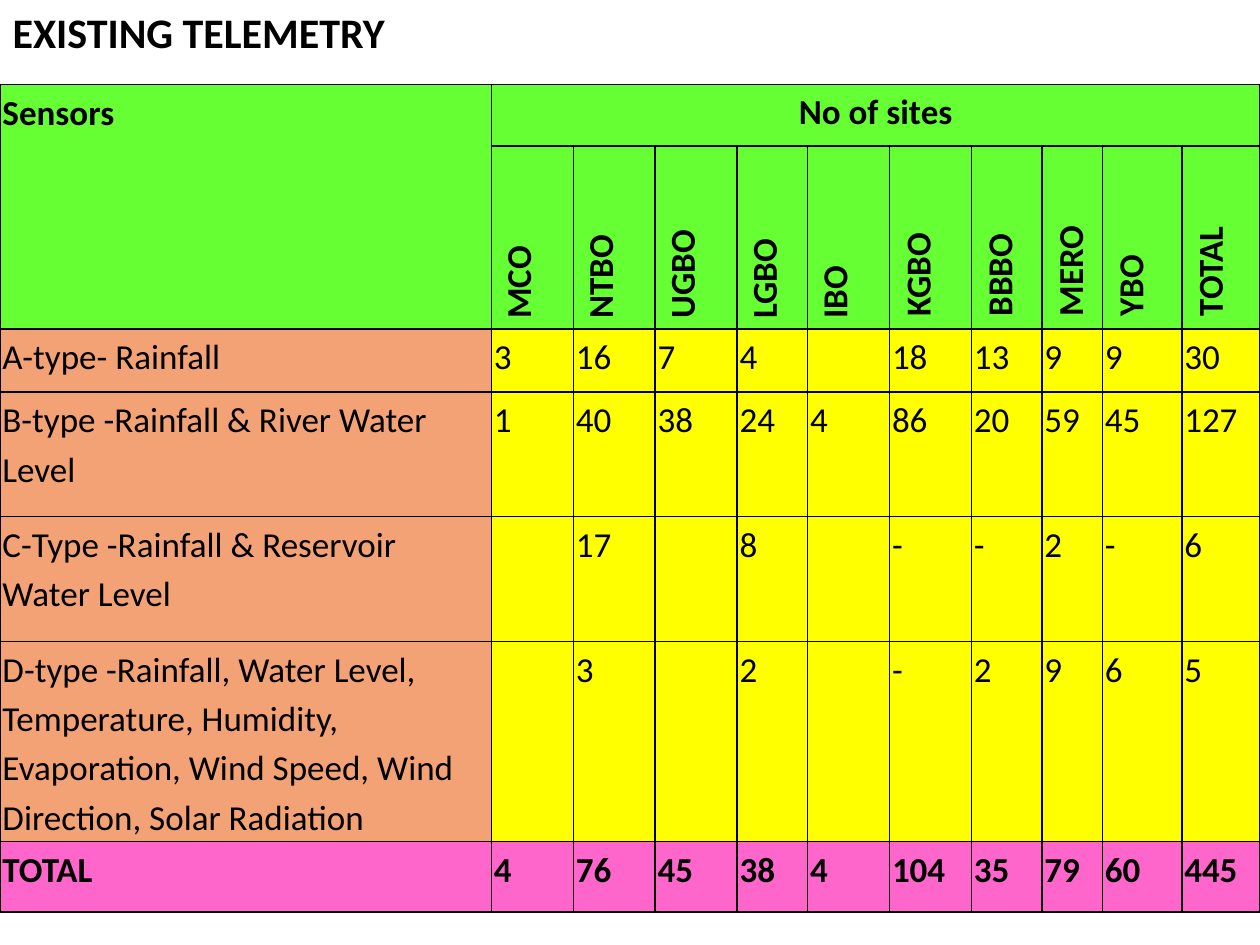
from dataclasses import dataclass

from lxml.etree import fromstring
from pptx import Presentation
from pptx.dml.color import RGBColor
from pptx.enum.text import MSO_ANCHOR, MSO_AUTO_SIZE, PP_ALIGN
from pptx.oxml.ns import nsdecls
from pptx.util import Inches, Pt

FONT = "Calibri"
BLACK, GREEN, ORANGE, YELLOW, PINK = "000000", "66FF33", "F3A276", "FFFF00", "FF66CC"

COLUMN_WIDTHS = [3.9, 0.65, 0.65, 0.65, 0.56, 0.65, 0.65, 0.56, 0.48, 0.63, 0.62]
HEADER_HEIGHTS = [0.49, 1.45]
OFFICES = ["MCO", "NTBO", "UGBO", "LGBO", "IBO", "KGBO", "BBBO", "MERO", "YBO", "TOTAL"]
FLUSH_OFFICES = 5  # leading offices whose header cells have no margins
CELL_MARGINS = (0.02, 0.01, 0.02, 0)
NO_MARGINS = (0, 0, 0, 0)


@dataclass
class SensorRow:
    label: str
    counts: list[str]
    height: float
    label_fill: str = ORANGE
    count_fill: str = YELLOW
    bold: bool = False


SENSOR_ROWS = [
    SensorRow("A-type- Rainfall",
              ["3", "16", "7", "4", "", "18", "13", "9", "9", "30"], 0.5),
    SensorRow("B-type -Rainfall & River Water Level",
              ["1", "40", "38", "24", "4", "86", "20", "59", "45", "127"], 0.99),
    SensorRow("C-Type -Rainfall & Reservoir Water Level",
              ["", "17", "", "8", "", "-", "-", "2", "-", "6"], 0.99),
    SensorRow("D-type -Rainfall, Water Level, Temperature, Humidity, "
              "Evaporation, Wind Speed, Wind Direction, Solar Radiation",
              ["", "3", "", "2", "", "-", "2", "9", "6", "5"], 1.59),
    SensorRow("TOTAL",
              ["4", "76", "45", "38", "4", "104", "35", "79", "60", "445"], 0.56,
              PINK, PINK, True),
]


def color(hex_value: str) -> RGBColor:
    return RGBColor.from_string(hex_value)


def write_text(frame, text: str, *, size: float = 20, bold: bool = False,
               align=PP_ALIGN.LEFT, line_spacing: float = 1.0,
               space_after: float = 0, indent: float = 0) -> None:
    paragraph = frame.paragraphs[0]
    paragraph.alignment = align
    paragraph.line_spacing = line_spacing
    paragraph.space_after = Pt(space_after)
    if indent:
        properties = paragraph._p.get_or_add_pPr()
        properties.set("marL", str(Inches(indent)))
        properties.set("indent", "0")
    run = paragraph.add_run()
    run.text = text
    run.font.name = FONT
    run.font.size = Pt(size)
    run.font.bold = bold
    run.font.color.rgb = color(BLACK)


def style_cell(cell, fill: str) -> None:
    """Fill the cell and draw a thin black line on its four sides."""
    cell.fill.solid()
    cell.fill.fore_color.rgb = color(fill)
    properties = cell._tc.get_or_add_tcPr()
    for position, side in enumerate(("lnL", "lnR", "lnT", "lnB")):
        properties.insert(position, fromstring(
            f'<a:{side} {nsdecls("a")} w="{Pt(1)}"><a:solidFill>'
            f'<a:srgbClr val="{BLACK}"/></a:solidFill></a:{side}>'))


def fill_cell(cell, text: str, fill: str, *, margins=CELL_MARGINS,
              vertical: bool = False, **text_format) -> None:
    style_cell(cell, fill)
    if not text:
        return
    (cell.margin_left, cell.margin_top,
     cell.margin_right, cell.margin_bottom) = map(Inches, margins)
    if vertical:
        cell._tc.get_or_add_tcPr().set("vert", "vert270")
    write_text(cell.text_frame, text, line_spacing=1.15, space_after=10, **text_format)


def add_sensor_table(slide) -> None:
    heights = HEADER_HEIGHTS + [row.height for row in SENSOR_ROWS]
    table = slide.shapes.add_table(
        len(heights), len(COLUMN_WIDTHS), Inches(0), Inches(0.67),
        Inches(10), Inches(sum(heights))).table
    table.first_row = table.horz_banding = False
    for column, width in zip(table.columns, COLUMN_WIDTHS):
        column.width = Inches(width)
    for table_row, height in zip(table.rows, heights):
        table_row.height = Inches(height)

    last_column = len(OFFICES)
    table.cell(0, 0).merge(table.cell(1, 0))
    table.cell(0, 1).merge(table.cell(0, last_column))
    fill_cell(table.cell(0, 0), "Sensors", GREEN, bold=True)
    fill_cell(table.cell(0, 1), "No of sites", GREEN, bold=True,
              margins=NO_MARGINS, align=PP_ALIGN.CENTER)
    style_cell(table.cell(1, 0), GREEN)
    for column in range(2, last_column + 1):
        style_cell(table.cell(0, column), GREEN)

    for column, office in enumerate(OFFICES, start=1):
        fill_cell(table.cell(1, column), office, GREEN, bold=True, vertical=True,
                  margins=NO_MARGINS if column <= FLUSH_OFFICES else CELL_MARGINS,
                  indent=0.08)

    for row_index, sensor in enumerate(SENSOR_ROWS, start=len(HEADER_HEIGHTS)):
        fill_cell(table.cell(row_index, 0), sensor.label, sensor.label_fill,
                  bold=sensor.bold)
        for column, count in enumerate(sensor.counts, start=1):
            fill_cell(table.cell(row_index, column), count, sensor.count_fill,
                      bold=sensor.bold)


def add_title(slide) -> None:
    title = slide.shapes.title
    title.left, title.top = Inches(0), Inches(0)
    title.width, title.height = Inches(7.08), Inches(0.5)
    frame = title.text_frame
    frame.word_wrap = True
    frame.auto_size = MSO_AUTO_SIZE.SHAPE_TO_FIT_TEXT
    frame.vertical_anchor = MSO_ANCHOR.TOP
    write_text(frame, "EXISTING TELEMETRY", size=24, bold=True)


def main() -> None:
    presentation = Presentation()
    presentation.slide_width, presentation.slide_height = Inches(10), Inches(7.5)
    slide = presentation.slides.add_slide(presentation.slide_layouts[5])
    add_sensor_table(slide)
    add_title(slide)
    presentation.save("out.pptx")


if __name__ == "__main__":
    main()
